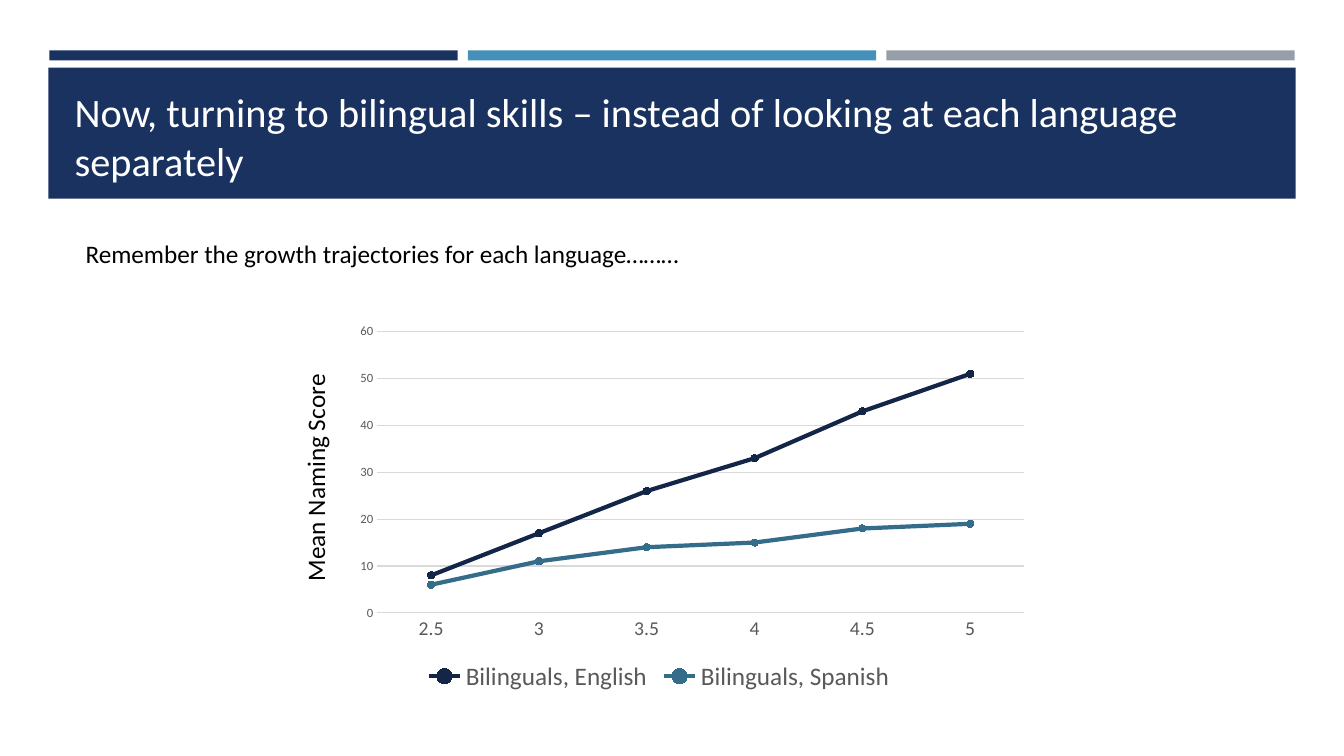
"""Build the slide on bilingual growth trajectories."""
from dataclasses import dataclass

from lxml import etree
from pptx import Presentation
from pptx.chart.axis import CategoryAxis, ValueAxis
from pptx.chart.chart import Chart
from pptx.chart.data import CategoryChartData
from pptx.dml.color import RGBColor
from pptx.enum.chart import XL_CHART_TYPE, XL_LEGEND_POSITION, XL_MARKER_STYLE, XL_TICK_MARK
from pptx.enum.shapes import MSO_SHAPE
from pptx.enum.text import MSO_ANCHOR, MSO_AUTO_SIZE, PP_ALIGN
from pptx.oxml.ns import qn
from pptx.slide import Slide
from pptx.text.text import Font, TextFrame
from pptx.util import Inches, Pt

RECT = MSO_SHAPE.RECTANGLE
LINE_MARKERS = XL_CHART_TYPE.LINE_MARKERS
LEGEND_BOTTOM = XL_LEGEND_POSITION.BOTTOM
CIRCLE = XL_MARKER_STYLE.CIRCLE
NO_TICK = XL_TICK_MARK.NONE
BOTTOM = MSO_ANCHOR.BOTTOM
LEFT = PP_ALIGN.LEFT
NO_FIT = MSO_AUTO_SIZE.NONE
GROW = MSO_AUTO_SIZE.SHAPE_TO_FIT_TEXT


@dataclass(frozen=True)
class Theme:
    """Font, colours and type sizes of the slide."""
    font: str = "Calibri"
    navy: str = "1A3260"
    blue: str = "4590B8"
    gray: str = "969FA7"
    white: str = "FFFFFF"
    black: str = "000000"
    label: str = "595959"
    grid: str = "D9D9D9"
    english: str = "142648"
    spanish: str = "346C8A"
    title_size: float = 28.8
    body_size: float = 18
    category_size: float = 14
    value_size: float = 9
    chart_size: float = 10


@dataclass(frozen=True)
class Box:
    """A rectangle in inches."""
    left: float
    top: float
    width: float
    height: float

    def emu(self) -> tuple[int, ...]:
        """Return the four lengths for python-pptx."""
        return tuple(Inches(v) for v in (self.left, self.top, self.width, self.height))


@dataclass(frozen=True)
class Bar:
    """A filled bar of the header."""
    box: Box
    color: str


@dataclass(frozen=True)
class Trajectory:
    """One line of the chart."""
    name: str
    scores: tuple[int, ...]
    color: str


THEME = Theme()
STRIPE_PITCH = 4.15
BARS = [
    Bar(Box(0.49 + i * STRIPE_PITCH, 0.5, 4.05, 0.1), color)
    for i, color in enumerate((THEME.navy, THEME.blue, THEME.gray))
] + [Bar(Box(0.48, 0.67, 12.37, 1.3), THEME.navy)]
AGES = ("2.5", "3", "3.5", "4", "4.5", "5")
TRAJECTORIES = [
    Trajectory("Bilinguals, English", (8, 17, 26, 33, 43, 51), THEME.english),
    Trajectory("Bilinguals, Spanish", (6, 11, 14, 15, 18, 19), THEME.spanish),
]


def style_font(font: Font, size: float, color: str) -> None:
    """Set family, size and colour of a font."""
    font.name = THEME.font
    font.size = Pt(size)
    font.bold = False
    font.color.rgb = RGBColor.from_string(color)


def add_run(tf: TextFrame, text: str, size: float, color: str) -> None:
    """Add a styled run to the first paragraph."""
    r = tf.paragraphs[0].add_run()
    r.text = text
    style_font(r.font, size, color)


def add_bar(s: Slide, bar: Bar) -> None:
    """Draw a header bar."""
    sp = s.shapes.add_shape(RECT, *bar.box.emu())
    sp.shadow.inherit = False
    sp.fill.solid()
    sp.fill.fore_color.rgb = RGBColor.from_string(bar.color)
    sp.line.fill.background()


def set_title(s: Slide, text: str, box: Box) -> None:
    """Place and fill the title above the banner."""
    sp = s.shapes.title
    sp.left, sp.top, sp.width, sp.height = box.emu()
    tf = sp.text_frame
    tf.word_wrap = True
    tf.auto_size = NO_FIT
    tf.vertical_anchor = BOTTOM
    tf.paragraphs[0].alignment = LEFT
    add_run(tf, text, THEME.title_size, THEME.white)
    s.shapes.element.append(sp.element)


def add_note(s: Slide, text: str, box: Box) -> None:
    """Add the line of text above the chart."""
    tf = s.shapes.add_textbox(*box.emu()).text_frame
    tf.word_wrap = True
    tf.auto_size = GROW
    add_run(tf, text, THEME.body_size, THEME.black)


def make_layout(**settings: str | float) -> etree._Element:
    """Build a manual chart layout from its settings."""
    layout = etree.Element(qn("c:layout"))
    manual = etree.SubElement(layout, qn("c:manualLayout"))
    for tag, value in settings.items():
        etree.SubElement(manual, qn(f"c:{tag}")).set("val", str(value))
    return layout


def drop_layout(parent: etree._Element) -> None:
    """Remove the automatic layout of a chart part."""
    for layout in parent.findall(qn("c:layout")):
        parent.remove(layout)


def style_axis(axis: CategoryAxis | ValueAxis, size: float) -> None:
    """Style the labels and ticks of an axis."""
    axis.major_tick_mark = axis.minor_tick_mark = NO_TICK
    style_font(axis.tick_labels.font, size, THEME.label)


def style_axes(chart: Chart) -> None:
    """Format both axes, the grid and the axis title."""
    ages, scores = chart.category_axis, chart.value_axis
    style_axis(ages, THEME.category_size)
    style_axis(scores, THEME.value_size)
    scores.minimum_scale, scores.maximum_scale, scores.major_unit = 0, 60, 10
    scores.format.line.fill.background()
    for line in (ages.format.line, scores.major_gridlines.format.line):
        line.color.rgb = RGBColor.from_string(THEME.grid)
        line.width = Pt(0.75)
    title = scores.axis_title
    add_run(title.text_frame, "Mean Naming Score", THEME.body_size, THEME.black)
    drop_layout(title.element)
    title.element.find(qn("c:tx")).addnext(
        make_layout(xMode="edge", yMode="edge", x=0.02, y=0.14))


def add_growth_chart(s: Slide, box: Box) -> None:
    """Add the line chart of scores by age."""
    data = CategoryChartData()
    data.categories = AGES
    for t in TRAJECTORIES:
        data.add_series(t.name, t.scores)
    chart = s.shapes.add_chart(LINE_MARKERS, *box.emu(), data).chart
    style_font(chart.font, THEME.chart_size, THEME.black)
    chart.has_title = False
    chart.has_legend = True
    chart.legend.position = LEGEND_BOTTOM
    chart.legend.include_in_layout = False
    style_font(chart.legend.font, THEME.body_size, THEME.label)
    chart.plots[0].vary_by_categories = False
    for series, t in zip(chart.plots[0].series, TRAJECTORIES):
        color = RGBColor.from_string(t.color)
        series.smooth = False
        series.format.line.color.rgb = color
        series.format.line.width = Pt(3)
        series.marker.style = CIRCLE
        series.marker.size = 5
        series.marker.format.fill.solid()
        series.marker.format.fill.fore_color.rgb = color
        series.marker.format.line.color.rgb = color
    style_axes(chart)
    plot_area = chart.element.find(f".//{qn('c:plotArea')}")
    drop_layout(plot_area)
    plot_area.insert(0, make_layout(layoutTarget="inner", xMode="edge", yMode="edge",
                                    x=0.13, y=0.04, w=0.85, h=0.74))


def main() -> None:
    """Build and save the presentation."""
    prs = Presentation()
    prs.slide_width, prs.slide_height = Inches(13.33), Inches(7.5)
    s = prs.slides.add_slide(prs.slide_layouts.get_by_name("Title Only"))
    for bar in BARS:
        add_bar(s, bar)
    set_title(s, "Now, turning to bilingual skills – instead of looking at each language separately",
              Box(0.64, 0.77, 12.06, 1.11))
    add_growth_chart(s, Box(2.76, 3.14, 7.55, 3.77))
    add_note(s, "Remember the growth trajectories for each language………", Box(0.75, 2.32, 6.88, 0.4))
    prs.save("out.pptx")


if __name__ == "__main__":
    main()
